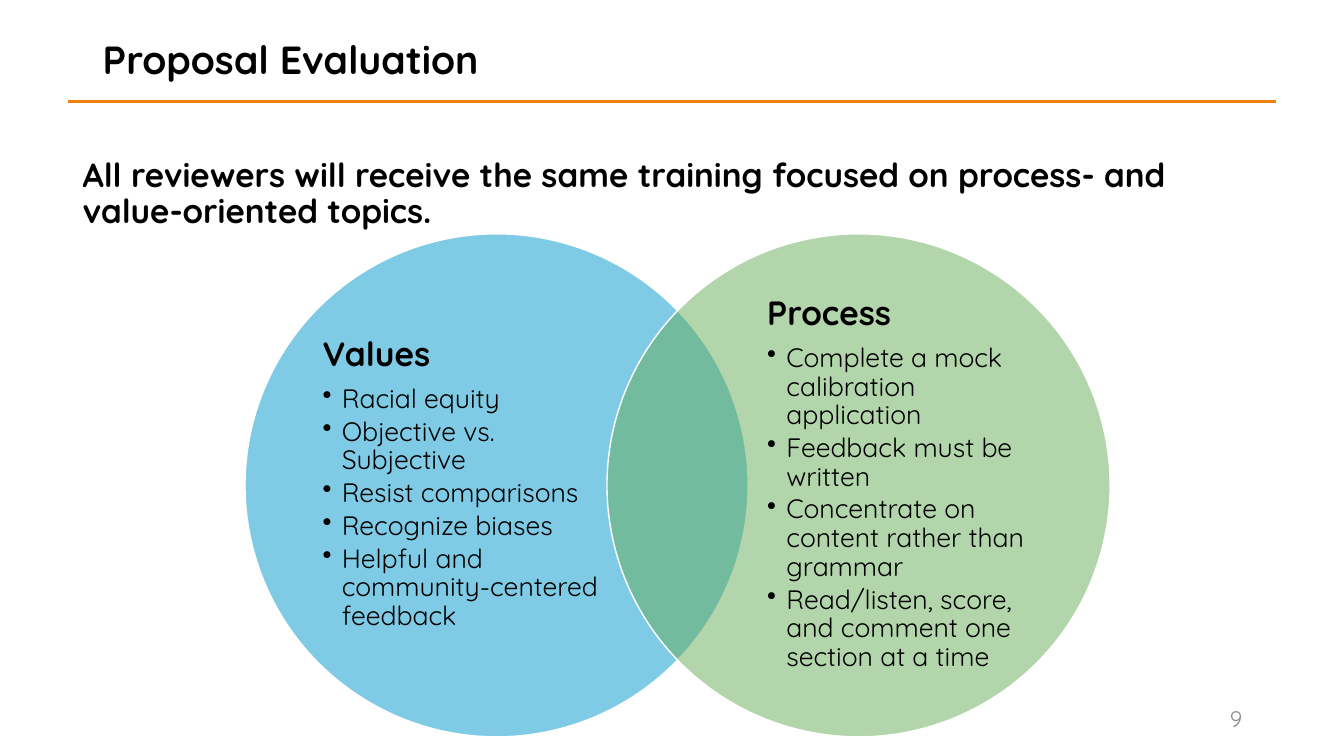
from lxml import etree
from pptx import Presentation
from pptx import util as u
from pptx.dml.color import RGBColor
from pptx.enum import shapes, text
from pptx.oxml.ns import qn

BLACK = RGBColor(0x00, 0x00, 0x00)
WHITE = RGBColor(0xFF, 0xFF, 0xFF)
GREY = RGBColor(0x8C, 0x8C, 0x8C)
ORANGE = RGBColor(0xF0, 0x7F, 0x09)
BLUE = RGBColor(0x00, 0x99, 0xCC)
GREEN = RGBColor(0x68, 0xAC, 0x58)
FONT = "Quicksand"
DIAMETER = 4.99
CIRCLE_TOP = 2.32
CIRCLE_LEFT = 2.43
CIRCLE_STEP = 3.59
LIST_INDENT = 0.19

TOPICS = [
    ("Values", BLUE, 0.77, [
        "Racial equity",
        "Objective vs. Subjective",
        "Resist comparisons",
        "Recognize biases",
        "Helpful and community-centered feedback",
    ]),
    ("Process", GREEN, 1.59, [
        "Complete a mock calibration application",
        "Feedback must be written",
        "Concentrate on content rather than grammar",
        "Read/listen, score, and comment one section at a time",
    ]),
]


def add_frame(slide, left, top, width, height):
    """Add a wrapping text box and return its text frame."""
    box = slide.shapes.add_textbox(*map(u.Inches, (left, top, width, height)))
    box.text_frame.word_wrap = True
    return box.text_frame


def write(paragraph, words, size, bold=False, color=BLACK):
    """Fill a paragraph with text in the slide's font."""
    paragraph.text = words
    font = paragraph.font
    font.name, font.size, font.bold = FONT, u.Pt(size), bold
    font.color.rgb = color
    paragraph.line_spacing = 0.9


def add_bullet(paragraph):
    """Give a paragraph a bullet with a hanging indent."""
    properties = paragraph._p.get_or_add_pPr()
    properties.set("marL", str(u.Inches(LIST_INDENT)))
    properties.set("indent", str(-u.Inches(LIST_INDENT)))
    bullet = etree.Element(qn("a:buChar"), char="•")
    following = properties.find(qn("a:defRPr"))
    following.addprevious(bullet)


def add_header(slide, left, top, width):
    """Place the title above its orange rule."""
    frame = add_frame(slide, left + 0.25, top, width - 0.5, 0.92)
    write(frame.paragraphs[0], "Proposal Evaluation", 28, True)
    rule_top = u.Inches(top + 0.66)
    rule = slide.shapes.add_connector(
        shapes.MSO_CONNECTOR.STRAIGHT,
        u.Inches(left), rule_top, u.Inches(left + width), rule_top)
    rule.line.color.rgb = ORANGE
    rule.line.width = u.Pt(2.25)
    etree.SubElement(rule._element.spPr, qn("a:effectLst"))


def add_introduction(slide, left, top, width, height):
    """Place the sentence that introduces the diagram."""
    paragraph = add_frame(slide, left, top, width, height).paragraphs[0]
    write(paragraph, "All reviewers will receive the same training focused on "
          "process- and value-oriented topics.", 23.8, True)
    paragraph.space_before = u.Pt(8.5)


def add_topic(slide, left, top, diameter, topic):
    """Draw a half-transparent circle with its heading and bullet list."""
    heading, color, text_offset, points = topic
    circle = slide.shapes.add_shape(
        shapes.MSO_SHAPE.OVAL,
        *map(u.Inches, (left, top, diameter, diameter)))
    circle.shadow.inherit = False
    circle.fill.solid()
    circle.fill.fore_color.rgb = color
    fill_color = circle._element.spPr.find(qn("a:solidFill"))[0]
    etree.SubElement(fill_color, qn("a:alpha"), val="50000")
    circle.line.color.rgb = WHITE
    circle.line.width = u.Pt(1)

    frame = add_frame(slide, left + text_offset, top + 0.58, 2.8, 3.81)
    frame.margin_left = frame.margin_right = 0
    frame.margin_top = frame.margin_bottom = 0
    frame.vertical_anchor = text.MSO_ANCHOR.MIDDLE
    write(frame.paragraphs[0], heading, 24, True)
    frame.paragraphs[0].space_after = u.Pt(8.4)
    for point in points:
        paragraph = frame.add_paragraph()
        write(paragraph, point, 19)
        paragraph.space_after = u.Pt(2.85)
        add_bullet(paragraph)


def add_page_number(slide, left, top, width, height):
    """Place the slide number at the lower right."""
    frame = add_frame(slide, left, top, width, height)
    frame.vertical_anchor = text.MSO_ANCHOR.MIDDLE
    write(frame.paragraphs[0], "9", 16, color=GREY)
    frame.paragraphs[0].alignment = text.PP_ALIGN.RIGHT


def main():
    """Build the proposal evaluation slide and save it."""
    presentation = Presentation()
    presentation.slide_width = u.Inches(13.33)
    presentation.slide_height = u.Inches(7.5)
    slide = presentation.slides.add_slide(presentation.slide_layouts[6])
    add_introduction(slide, 0.72, 1.53, 11.99, 0.92)
    add_header(slide, 0.67, 0.35, 11.99)
    for column, topic in enumerate(TOPICS):
        left = CIRCLE_LEFT + column * CIRCLE_STEP
        add_topic(slide, left, CIRCLE_TOP, DIAMETER, topic)
    add_page_number(slide, 9.42, 6.95, 3, 0.4)
    presentation.save("out.pptx")


if __name__ == "__main__":
    main()
